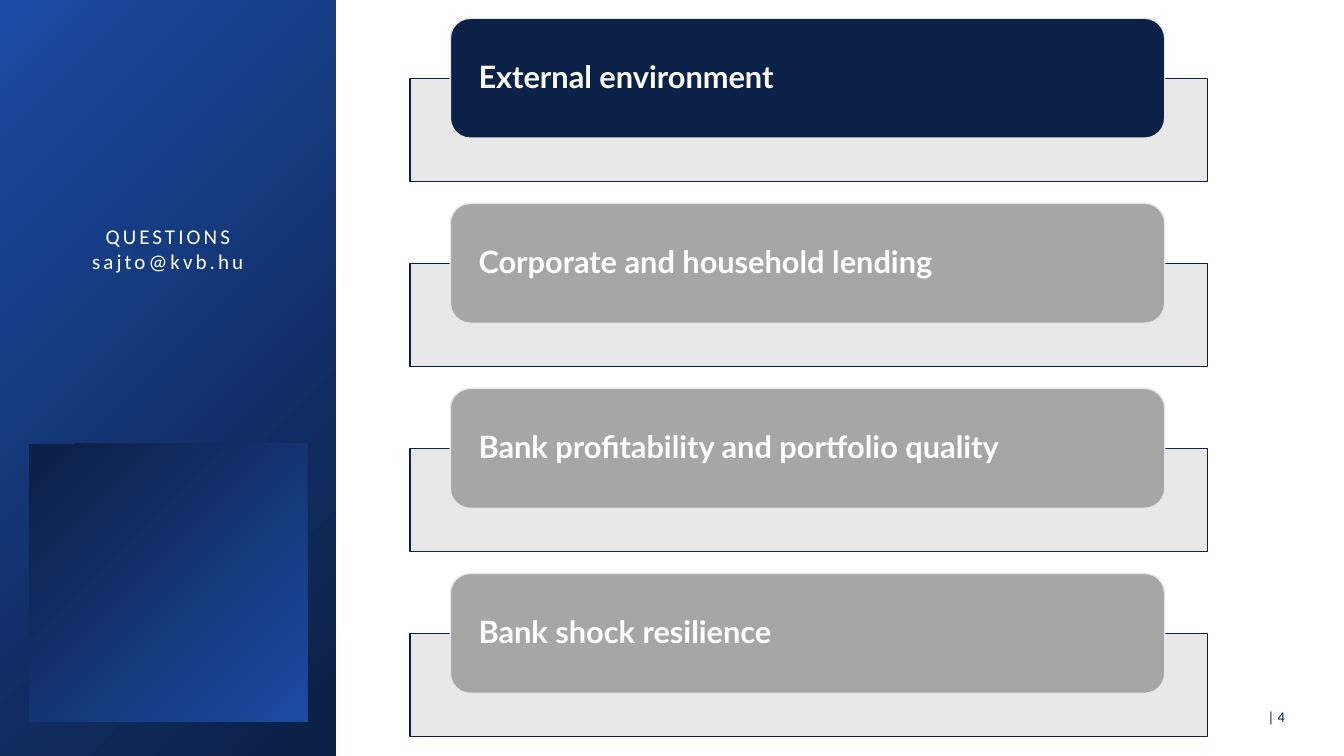
from pptx import Presentation
from pptx.dml.color import RGBColor
from pptx.enum.shapes import MSO_SHAPE
from pptx.enum.text import MSO_ANCHOR, PP_ALIGN
from pptx.oxml.ns import qn
from pptx.util import Pt
from lxml.etree import SubElement

NAVY = RGBColor(0x0C, 0x21, 0x48)
BLUE = RGBColor(0x1B, 0x4B, 0xA3)
PALE = RGBColor(0xE7, 0xE6, 0xE6)
GREY = RGBColor(0xA6, 0xA6, 0xA6)
WHITE = RGBColor(0xFF, 0xFF, 0xFF)


def write(shape, text, size, color, font="Calibri", bold=False,
          align=PP_ALIGN.LEFT, anchor=MSO_ANCHOR.MIDDLE, inset=(7.2, 3.6),
          line=1.0, track=0):
    """Fill a shape with one paragraph per line; track is letter spacing in points."""
    frame = shape.text_frame
    frame.word_wrap = True
    frame.vertical_anchor = anchor
    frame.margin_left = frame.margin_right = Pt(inset[0])
    frame.margin_top = frame.margin_bottom = Pt(inset[1])
    for i, words in enumerate(text.split("\n")):
        para = frame.add_paragraph() if i else frame.paragraphs[0]
        para.alignment = align
        para.line_spacing = line
        run = para.add_run()
        run.text = words
        run.font.size = Pt(size)
        run.font.name = font
        run.font.bold = bold
        run.font.color.rgb = color
        if track:
            run._r.get_or_add_rPr().set("spc", str(round(track * 100)))


def block(kind, left, top, width, height, fill=None, edge=None):
    """Add a shape with a solid fill, or the navy to blue gradient if none is given."""
    shape = slide.shapes.add_shape(kind, Pt(left), Pt(top), Pt(width), Pt(height))
    shape.shadow.inherit = False
    if fill is None:
        shape.fill.gradient()
        shape.fill.gradient_angle = 135
        for stop, color, place in zip(shape.fill.gradient_stops, (NAVY, BLUE), (0.06, 1)):
            stop.color.rgb = color
            stop.position = place
    else:
        shape.fill.solid()
        shape.fill.fore_color.rgb = fill
    if edge is None:
        shape.line.fill.background()
    else:
        shape.line.color.rgb = edge
        shape.line.width = Pt(1)
    return shape


deck = Presentation()
deck.slide_width, deck.slide_height = Pt(960), Pt(540)
slide = deck.slides.add_slide(deck.slide_layouts[6])

# Side panel with contact
block(MSO_SHAPE.RECTANGLE, 0, 0, 240, 540)
square = block(MSO_SHAPE.RECTANGLE, 20.8, 316.8, 198.7, 198.7)
square.rotation = 180
contact = slide.shapes.add_textbox(Pt(28.8), Pt(156.2), Pt(182.2), Pt(43.9))
write(contact, "QUESTIONS\nsajto@kvb.hu", 15, WHITE, align=PP_ALIGN.CENTER,
      anchor=MSO_ANCHOR.TOP, track=2.2)

# Page number
page = slide.shapes.add_textbox(Pt(877.7), Pt(496.8), Pt(49.7), Pt(29.5))
write(page, "| 4 ", 10.5, NAVY, align=PP_ALIGN.RIGHT)

# Agenda, current topic in navy
topics = ["External environment", "Corporate and household lending",
          "Bank profitability and portfolio quality", "Bank shock resilience"]
for i, topic in enumerate(topics):
    top = 13.1 + i * 132.2
    tray = block(MSO_SHAPE.RECTANGLE, 293, top + 43, 569.5, 73.5, PALE, NAVY)
    tint = tray.fill._xPr.find(qn("a:solidFill"))[0]
    SubElement(tint, qn("a:alpha"), val="90000")
    label = block(MSO_SHAPE.ROUNDED_RECTANGLE, 321.7, top, 510.3, 85.6,
                  GREY if i else NAVY, PALE)
    write(label, topic, 22, WHITE, font="Lato", bold=True, inset=(16, 0), line=0.9)

deck.save("out.pptx")
